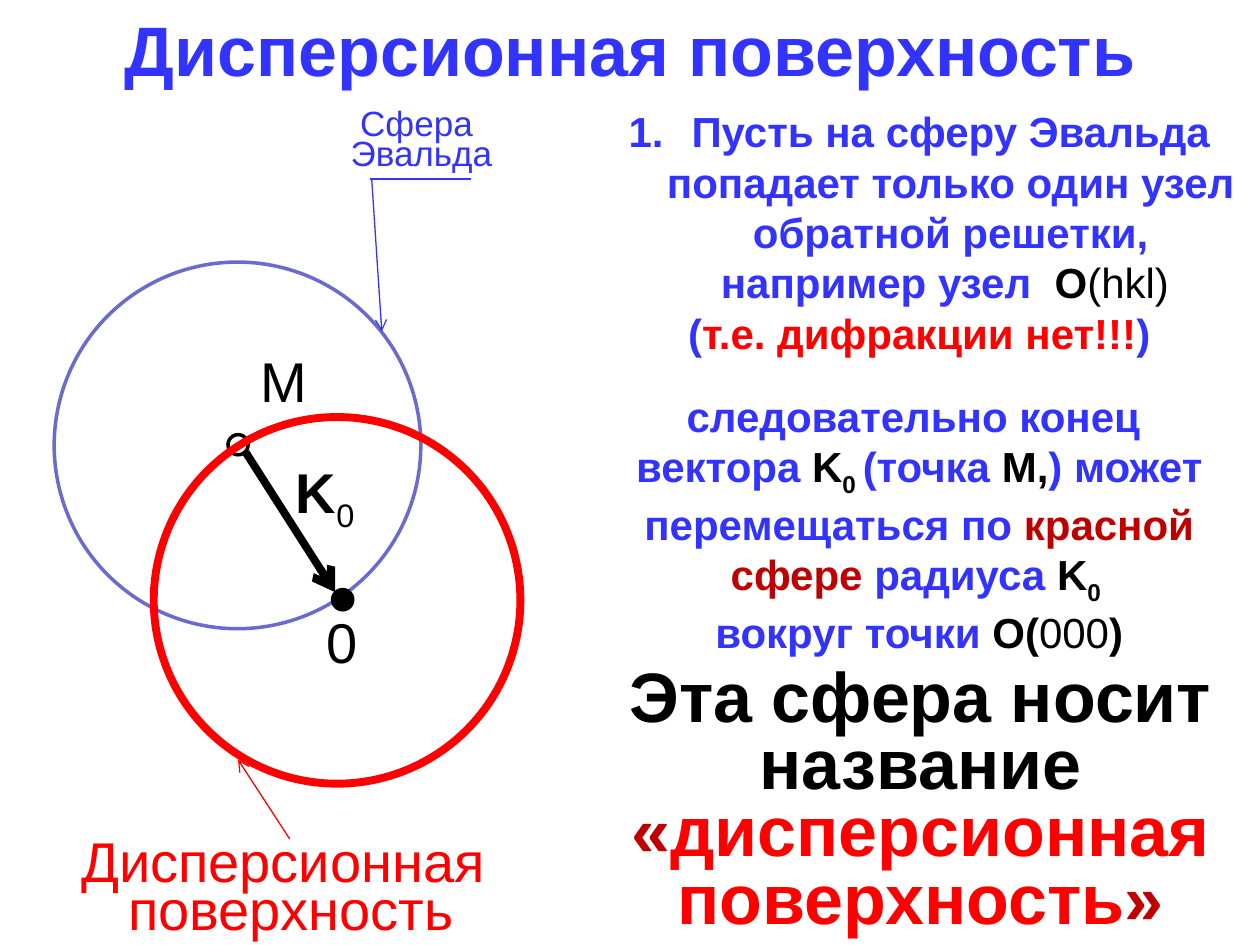
from lxml import etree
from pptx import Presentation
from pptx import util as u
from pptx.dml.color import RGBColor
from pptx.enum import shapes, text
from pptx.oxml.ns import qn

INK = {"blue": "3333FF", "ring": "6B6BCF", "red": "FF0000",
       "dark": "C00000", "black": "000000", "white": "FFFFFF"}
FONT = "Arial"


def paint(name):
    return RGBColor.from_string(INK[name])


def oval(slide, x, y, size, line, width, fill=None):
    """Circle with its top left corner at x, y."""
    ring = slide.shapes.add_shape(shapes.MSO_SHAPE.OVAL, *map(u.Inches, (x, y, size, size)))
    ring.shadow.inherit = False
    if fill:
        ring.fill.solid()
        ring.fill.fore_color.rgb = paint(fill)
    else:
        ring.fill.background()
    ring.line.color.rgb = paint(line)
    ring.line.width = u.Pt(width)


def line(slide, start, end, color, width, arrow=True):
    link = slide.shapes.add_connector(
        shapes.MSO_CONNECTOR.STRAIGHT, *map(u.Inches, (*start, *end)))
    link.line.color.rgb = paint(color)
    link.line.width = u.Pt(width)
    if arrow:
        etree.SubElement(link.line._get_or_add_ln(), qn("a:tailEnd"), type="arrow")
    etree.SubElement(link._element.spPr, qn("a:effectLst"))


def write(slide, box, paras, size, center=True, wrap=True, space=None):
    """Text box; each run is (text, colour, bold, subscript), the last two optional."""
    area = slide.shapes.add_textbox(*map(u.Inches, box))
    if wrap:
        area.fill.solid()
        area.fill.fore_color.rgb = paint("white")
    frame = area.text_frame
    frame.word_wrap = wrap
    for i, runs in enumerate(paras):
        para = frame.add_paragraph() if i else frame.paragraphs[0]
        para.alignment = text.PP_ALIGN.CENTER if center else text.PP_ALIGN.LEFT
        if space:
            para.line_spacing = space
        for words, color, *style in runs:
            bold, sub = (style + [False, False])[:2]
            run = para.add_run()
            run.text = words
            run.font.name = FONT
            run.font.size = u.Pt(size)
            run.font.bold = bold
            run.font.color.rgb = paint(color)
            if sub:
                run.font._element.set("baseline", "-25000")
    return frame


def number(para):
    """Automatic number with a hanging indent."""
    props = para._p.get_or_add_pPr()
    props.set("marL", str(u.Inches(0.5)))
    props.set("indent", str(-u.Inches(0.5)))
    etree.SubElement(props, qn("a:buFont"), typeface=FONT)
    etree.SubElement(props, qn("a:buAutoNum"), type="arabicPeriod")


def diagram(slide, x, y):
    """Two spheres, the wave vector and their labels."""
    # Spheres and points
    oval(slide, x, y, 2.91, "ring", 2)
    oval(slide, x + 2.21, y + 2.6, 0.16, "black", 2, "black")
    oval(slide, x + 1.38, y + 1.37, 0.16, "black", 2)
    line(slide, (x + 1.52, y + 1.51), (x + 2.23, y + 2.62), "black", 4.5)
    oval(slide, x + 0.79, y + 1.23, 2.91, "red", 4.5)

    # Point and vector names
    for dx, dy, wide, runs in (
            (1.54, 0.62, 0.57, [("M", "black")]),
            (2.06, 2.69, 0.45, [("0", "black")]),
            (1.82, 1.5, 0.69, [("K", "black", True), ("0", "black", False, True)])):
        write(slide, (x + dx, y + dy, wide, 0.64), [runs], 32, center=False, wrap=False)

    # Sphere names with leaders
    for dx, dy, wide, high, first, second, color, size in (
            (2.25, -1.23, 1.33, 0.57, "Сфера ", "Эвальда", "blue", 20),
            (0.1, 4.58, 3.56, 0.85, "Дисперсионная ", "поверхность", "red", 32)):
        write(slide, (x + dx, y + dy, wide, high),
              [[(first, color)], [(second, color)]], size, wrap=False, space=0.7)
    line(slide, (x + 2.52, y - 0.66), (x + 2.6, y + 0.55), "blue", 0.75)
    line(slide, (x + 1.87, y + 4.58), (x + 1.46, y + 3.95), "red", 0.75)
    line(slide, (x + 2.51, y - 0.66), (x + 3.31, y - 0.66), "blue", 1, arrow=False)


def theory(slide, x, y, wide):
    """Column with the premise, the consequence and the name."""
    # Premise
    frame = write(slide, (x, y, wide, 2.12), [
        [("Пусть на сферу Эвальда попадает только один узел обратной решетки, "
          "например узел  ", "blue", True), ("O", "black", True), ("(hkl) ", "black")],
        [("(", "blue", True), ("т.е. дифракции нет!!!", "red", True), (")", "blue", True)],
    ], 24)
    number(frame.paragraphs[0])

    # Consequence
    wave = [("K", "black", True), ("0 ", "black", True, True)]
    write(slide, (x, y + 2.26, wide, 2.12), [
        [("следовательно конец ", "blue", True)],
        [("вектора ", "blue", True), *wave, ("(точка ", "blue", True),
         ("М,", "black", True), (") может перемещаться по ", "blue", True),
         ("красной сфере ", "dark", True), ("радиуса ", "blue", True), *wave],
        [("вокруг точки ", "blue", True), ("О(", "black", True),
         ("000", "black"), (")", "black", True)],
    ], 24)

    # Name of the sphere
    write(slide, (x + 0.01, y + 4.47, wide, 2.26), [
        [("Эта сфера носит название ", "black", True), ("«", "dark", True),
         ("дисперсионная поверхность", "red", True), ("»", "dark", True)],
    ], 40, space=0.8)


def main():
    deck = Presentation()
    deck.slide_width, deck.slide_height = u.Inches(10), u.Inches(7.5)
    slide = deck.slides.add_slide(deck.slide_layouts[6])
    diagram(slide, 0.43, 2.08)
    write(slide, (0, 0, 10, 0.77), [[("Дисперсионная поверхность", "blue", True)]], 40)
    theory(slide, 4.6, 0.79, 5.39)
    deck.save("out.pptx")


if __name__ == "__main__":
    main()
